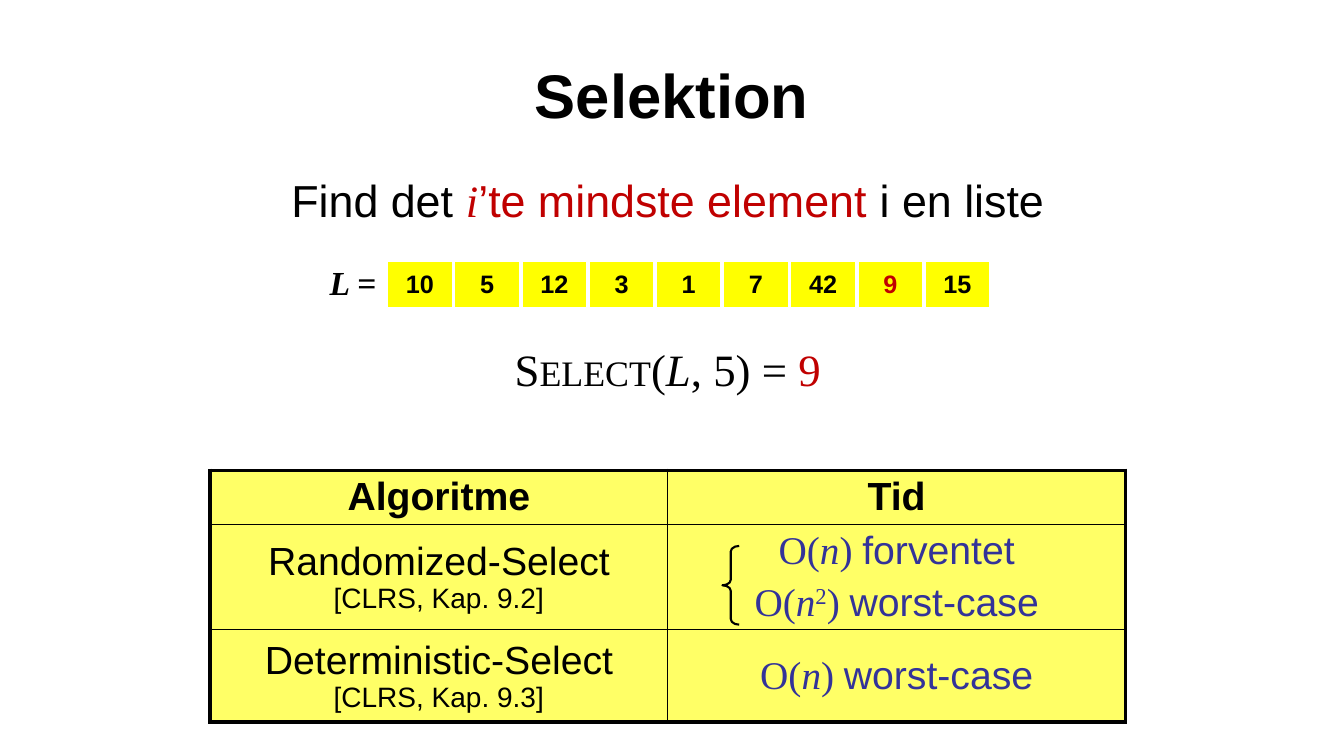
from dataclasses import dataclass

from lxml.etree import SubElement
from pptx import Presentation
from pptx.dml.color import RGBColor
from pptx.enum.shapes import MSO_SHAPE
from pptx.enum.text import MSO_ANCHOR, MSO_AUTO_SIZE, PP_ALIGN
from pptx.oxml.ns import qn
from pptx.util import Emu, Pt

BLACK = RGBColor(0x00, 0x00, 0x00)
WHITE = RGBColor(0xFF, 0xFF, 0xFF)
RED = RGBColor(0xC0, 0x00, 0x00)
BLUE = RGBColor(0x33, 0x33, 0x99)
YELLOW = RGBColor(0xFF, 0xFF, 0x00)
PALE_YELLOW = RGBColor(0xFF, 0xFF, 0x66)
SANS, SERIF = "Arial", "Times New Roman"
EMU_PER_PX = 9525


@dataclass(frozen=True)
class Span:
    text: str
    size: int = 28
    font: str = SANS
    color: RGBColor = BLACK
    bold: bool = False
    italic: bool = False
    small_caps: bool = False
    superscript: bool = False


@dataclass(frozen=True)
class Line:
    spans: tuple[Span, ...]
    before: float = 0
    align: PP_ALIGN = PP_ALIGN.CENTER


@dataclass(frozen=True)
class Cell:
    lines: tuple[Line, ...]
    fill: RGBColor | None


def px(n: int) -> Emu:
    return Emu(n * EMU_PER_PX)


def place(s, left: int, top: int, width: int, height: int) -> None:
    s.left, s.top, s.width, s.height = map(px, (left, top, width, height))


def write(tf, lines: tuple[Line, ...]) -> None:
    for i, line in enumerate(lines):
        p = tf.paragraphs[0] if i == 0 else tf.add_paragraph()
        p.alignment = line.align
        p.space_before = Pt(line.before)
        for span in line.spans:
            r = p.add_run()
            r.text = span.text
            f = r.font
            f.size, f.name = Pt(span.size), span.font
            f.bold, f.italic = span.bold, span.italic
            f.color.rgb = span.color
            if span.small_caps:
                f._element.set("cap", "small")
            if span.superscript:
                f._element.set("baseline", "30000")


def border(cell, side: str, color: RGBColor, width: int) -> None:
    ln = SubElement(cell._tc.get_or_add_tcPr(), qn(f"a:ln{side}"), w=str(Pt(width)))
    SubElement(SubElement(ln, qn("a:solidFill")), qn("a:srgbClr"), val=str(color))


def add_grid(slide, left: int, top: int, col_width: int, heights: list[int],
             rows: list[list[Cell]], line: RGBColor, outer: int, inner: int) -> None:
    """Draw a table of equal columns, with separate outer and inner border widths."""
    n_rows, n_cols = len(rows), len(rows[0])
    table = slide.shapes.add_table(n_rows, n_cols, px(left), px(top),
                                   px(col_width * n_cols), px(sum(heights))).table
    table.first_row = table.horz_banding = False
    for col in table.columns:
        col.width = px(col_width)
    for i, (height, row) in enumerate(zip(heights, rows)):
        table.rows[i].height = px(height)
        for j, content in enumerate(row):
            cell = table.cell(i, j)
            cell.vertical_anchor = MSO_ANCHOR.MIDDLE
            edges = {"L": j == 0, "R": j == n_cols - 1,
                     "T": i == 0, "B": i == n_rows - 1}
            for side, at_edge in edges.items():
                border(cell, side, line, outer if at_edge else inner)
            if content.fill is None:
                cell.fill.background()
            else:
                cell.fill.solid()
                cell.fill.fore_color.rgb = content.fill
            write(cell.text_frame, content.lines)


def heading(text: str) -> Cell:
    return Cell((Line((Span(text, bold=True),)),), PALE_YELLOW)


def algorithm(name: str, chapter: str) -> Cell:
    return Cell((Line((Span(name),)),
                 Line((Span(f"[CLRS, Kap. {chapter}]", size=20),))), PALE_YELLOW)


def bound(kind: str, power: str = "") -> Line:
    """A running time O(n) or O(n^power), followed by its kind."""
    spans = [Span("O(", font=SERIF, color=BLUE),
             Span("n", font=SERIF, color=BLUE, italic=True)]
    if power:
        spans.append(Span(power, font=SERIF, color=BLUE, superscript=True))
    spans += [Span(") ", font=SERIF, color=BLUE), Span(kind, color=BLUE)]
    return Line(tuple(spans), before=5.6)


def times(*bounds: Line) -> Cell:
    return Cell(bounds, PALE_YELLOW)


def number(value: int) -> Cell:
    color = RED if value == SELECTED else BLACK
    return Cell((Line((Span(str(value), size=18, color=color, bold=True),)),), YELLOW)


SELECTED = 9
NUMBERS = [10, 5, 12, 3, 1, 7, 42, SELECTED, 15]
TITLE = (Line((Span("Selektion", size=44, bold=True),)),)
BODY = (
    Line((Span("Find det ", 32),
          Span("i", 32, SERIF, RED, italic=True),
          Span("’te mindste element", 32, color=RED),
          Span(" i en liste", 32)), before=6.4),
    Line((Span("Select", 32, SERIF, small_caps=True),
          Span("(", 32, SERIF),
          Span("L", 32, SERIF, italic=True),
          Span(", 5) = ", 32, SERIF),
          Span(str(SELECTED), 32, SERIF, RED)), before=82),
)
LIST_LABEL = Cell((Line((Span("L =", 24, SERIF, bold=True, italic=True),),
                        align=PP_ALIGN.RIGHT),), None)
ALGORITHMS = [
    [heading("Algoritme"), heading("Tid")],
    [algorithm("Randomized-Select", "9.2"),
     times(bound("forventet"), bound("worst-case", power="2"))],
    [algorithm("Deterministic-Select", "9.3"), times(bound("worst-case"))],
]


def main() -> None:
    prs = Presentation()
    prs.slide_width, prs.slide_height = px(1280), px(720)
    slide = prs.slides.add_slide(prs.slide_layouts[1])

    title, body = slide.placeholders
    place(title, 64, 29, 1152, 120)
    title.text_frame.vertical_anchor = MSO_ANCHOR.MIDDLE
    write(title.text_frame, TITLE)

    place(body, 204, 160, 864, 256)
    body.text_frame.auto_size = MSO_AUTO_SIZE.NONE
    write(body.text_frame, BODY)
    for p in body.text_frame.paragraphs:
        pPr = p._p.get_or_add_pPr()
        pPr.set("marL", "0")
        pPr.set("indent", "0")
        SubElement(pPr, qn("a:buNone"))

    add_grid(slide, 200, 448, 436, [49, 100, 88], ALGORITHMS, BLACK, outer=3, inner=1)
    add_grid(slide, 304, 248, 64, [46], [[LIST_LABEL, *map(number, NUMBERS)]],
             WHITE, outer=3, inner=3)

    brace = slide.shapes.add_shape(MSO_SHAPE.LEFT_BRACE, px(688), px(520), px(16), px(75))
    brace.adjustments[0] = 0.33
    brace.shadow.inherit = False
    brace.fill.background()
    brace.line.color.rgb = BLACK
    brace.line.width = Pt(1.5)

    prs.save("out.pptx")


if __name__ == "__main__":
    main()
